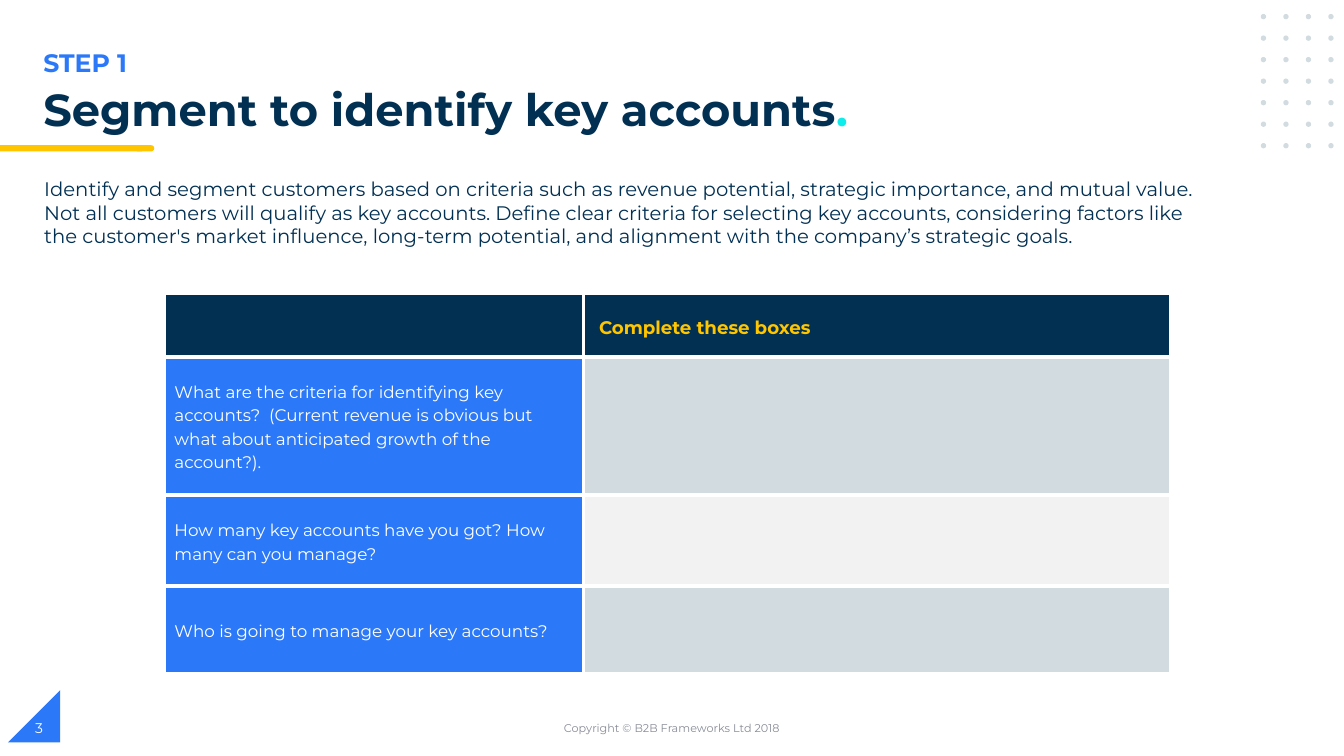
from collections import namedtuple
from dataclasses import dataclass

from lxml import etree
from pptx import Presentation
from pptx.dml.color import RGBColor
from pptx.enum import shapes, text
from pptx.oxml import ns
from pptx.util import Pt

Box = namedtuple("Box", "left top width height")


@dataclass(frozen=True)
class Theme:
    """Colours, type sizes and font of the slide."""
    navy: str = "023053"
    blue: str = "2B79F8"
    yellow: str = "FFC600"
    cyan: str = "0EECEC"
    mist: str = "D1DBE0"
    pale: str = "F2F2F2"
    grey: str = "888C97"
    white: str = "FFFFFF"
    font: str = "Montserrat"
    title: int = 32
    step: int = 18
    body: int = 14
    header: int = 13
    question: int = 12
    number: int = 10
    copyright: int = 8


THEME = Theme()


def add_run(paragraph, words, size, color, bold=False):
    """Append one formatted run to a paragraph."""
    run = paragraph.add_run()
    run.text = words
    run.font.name = THEME.font
    run.font.size = Pt(size)
    run.font.bold = bold
    run.font.color.rgb = RGBColor.from_string(color)


def add_label(slide, box, anchor=text.MSO_ANCHOR.TOP):
    """Add a wrapping text box and return its first paragraph."""
    frame = slide.shapes.add_textbox(*map(Pt, box)).text_frame
    frame.word_wrap = True
    frame.vertical_anchor = anchor
    return frame.paragraphs[0]


def add_solid(slide, kind, box, color):
    """Add a plain filled shape without line or shadow."""
    solid = slide.shapes.add_shape(kind, *map(Pt, box))
    solid.shadow.inherit = False
    solid.fill.solid()
    solid.fill.fore_color.rgb = RGBColor.from_string(color)
    solid.line.fill.background()
    return solid


def add_heading(slide, box):
    """Place the step, the title and the yellow rule below them."""
    step = add_label(slide, Box(box.left, box.top, box.width, 29))
    add_run(step, "STEP 1", THEME.step, THEME.blue, True)
    title = add_label(slide, Box(box.left, box.top + 28.8, box.width, 29))
    title.line_spacing = 0.9
    add_run(title, "Segment to identify key accounts", THEME.title, THEME.navy, True)
    add_run(title, ".", THEME.title, THEME.cyan, True)
    rule_top = box.top + box.height - 4.5
    add_solid(slide, shapes.MSO_SHAPE.FLOWCHART_TERMINATOR,
              Box(96.5, rule_top, 13.7, 4.5), THEME.yellow)
    add_solid(slide, shapes.MSO_SHAPE.RECTANGLE,
              Box(0, rule_top, 101.5, 4.5), THEME.yellow)


def add_dots(slide, box, columns=4, rows=7, dot=3.8):
    """Spread a grid of dots evenly over the box."""
    across = (box.width - dot) / (columns - 1)
    down = (box.height - dot) / (rows - 1)
    for row in range(rows):
        for column in range(columns):
            add_solid(slide, shapes.MSO_SHAPE.OVAL,
                      Box(box.left + column * across, box.top + row * down, dot, dot),
                      THEME.mist)


def add_introduction(slide, box):
    """Place the introductory paragraph."""
    add_run(add_label(slide, box),
            "Identify and segment customers based on criteria such as revenue potential, "
            "strategic importance, and mutual value. Not all customers will qualify as key "
            "accounts. Define clear criteria for selecting key accounts, considering factors "
            "like the customer's market influence, long-term potential, and alignment with "
            "the company’s strategic goals.", THEME.body, THEME.navy)


def style_cell(cell, fill):
    """Give a cell its white borders, fill, margins and anchor."""
    properties = cell._tc.get_or_add_tcPr()
    for side in ("a:lnL", "a:lnR", "a:lnT", "a:lnB"):
        border = etree.SubElement(properties, ns.qn(side), w=str(Pt(3)))
        paint = etree.SubElement(border, ns.qn("a:solidFill"))
        etree.SubElement(paint, ns.qn("a:srgbClr"), val=THEME.white)
    cell.fill.solid()
    cell.fill.fore_color.rgb = RGBColor.from_string(fill)
    cell.margin_left = cell.margin_right = Pt(7.2)
    cell.margin_top = cell.margin_bottom = 0
    cell.vertical_anchor = text.MSO_ANCHOR.MIDDLE


def add_worksheet(slide, box):
    """Place the table of questions with boxes to complete."""
    questions = (
        ("What are the criteria for identifying key accounts?  (Current revenue is "
         "obvious but what about anticipated growth of the account?).", THEME.mist, 99),
        ("How many key accounts have you got? How many can you manage?", THEME.pale, 65),
        ("Who is going to manage your key accounts?", THEME.mist, 62.5),
    )
    worksheet = slide.shapes.add_table(len(questions) + 1, 2, *map(Pt, box)).table
    worksheet.first_row = worksheet.horz_banding = False
    question_width = 299.5
    worksheet.columns[0].width = Pt(question_width)
    worksheet.columns[1].width = Pt(box.width - question_width)
    worksheet.rows[0].height = Pt(box.height - sum(height for *_, height in questions))

    blank, header = worksheet.cell(0, 0), worksheet.cell(0, 1)
    style_cell(blank, THEME.navy)
    style_cell(header, THEME.navy)
    header.margin_left = Pt(11)
    header.margin_top = Pt(2)
    paragraph = header.text_frame.paragraphs[0]
    paragraph.line_spacing = 1.15
    add_run(paragraph, "Complete these boxes", THEME.header, THEME.yellow, True)

    for row, (question, answer_fill, height) in enumerate(questions, 1):
        worksheet.rows[row].height = Pt(height)
        style_cell(worksheet.cell(row, 0), THEME.blue)
        style_cell(worksheet.cell(row, 1), answer_fill)
        paragraph = worksheet.cell(row, 0).text_frame.paragraphs[0]
        paragraph.line_spacing = 1.15
        add_run(paragraph, question, THEME.question, THEME.white)


def add_footer(slide, box):
    """Place the corner triangle, the page number and the copyright line."""
    corner = add_solid(slide, shapes.MSO_SHAPE.RIGHT_TRIANGLE,
                       Box(5.8, box.top - 12.4, 37.2, 37.2), THEME.blue)
    corner.rotation = 270
    number = add_label(slide, Box(18, box.top, 216, box.height), text.MSO_ANCHOR.MIDDLE)
    add_run(number, "3", THEME.number, THEME.white)
    copyright_line = add_label(
        slide, Box(box.left + (box.width - 324) / 2, box.top, 324, box.height),
        text.MSO_ANCHOR.MIDDLE)
    copyright_line.alignment = text.PP_ALIGN.CENTER
    add_run(copyright_line, "Copyright © B2B Frameworks Ltd 2018",
            THEME.copyright, THEME.grey)


def main():
    """Build the slide and save it."""
    presentation = Presentation()
    presentation.slide_width, presentation.slide_height = Pt(960), Pt(540)
    slide = presentation.slides.add_slide(presentation.slide_layouts[6])
    add_heading(slide, Box(23.8, 30.2, 635, 78))
    add_dots(slide, Box(900.6, 10, 52, 96))
    add_introduction(slide, Box(24.5, 123.1, 848, 58.5))
    add_worksheet(slide, Box(117.4, 209.5, 719, 271.8))
    add_footer(slide, Box(0, 505.4, 960, 28.8))
    presentation.save("out.pptx")


if __name__ == "__main__":
    main()
